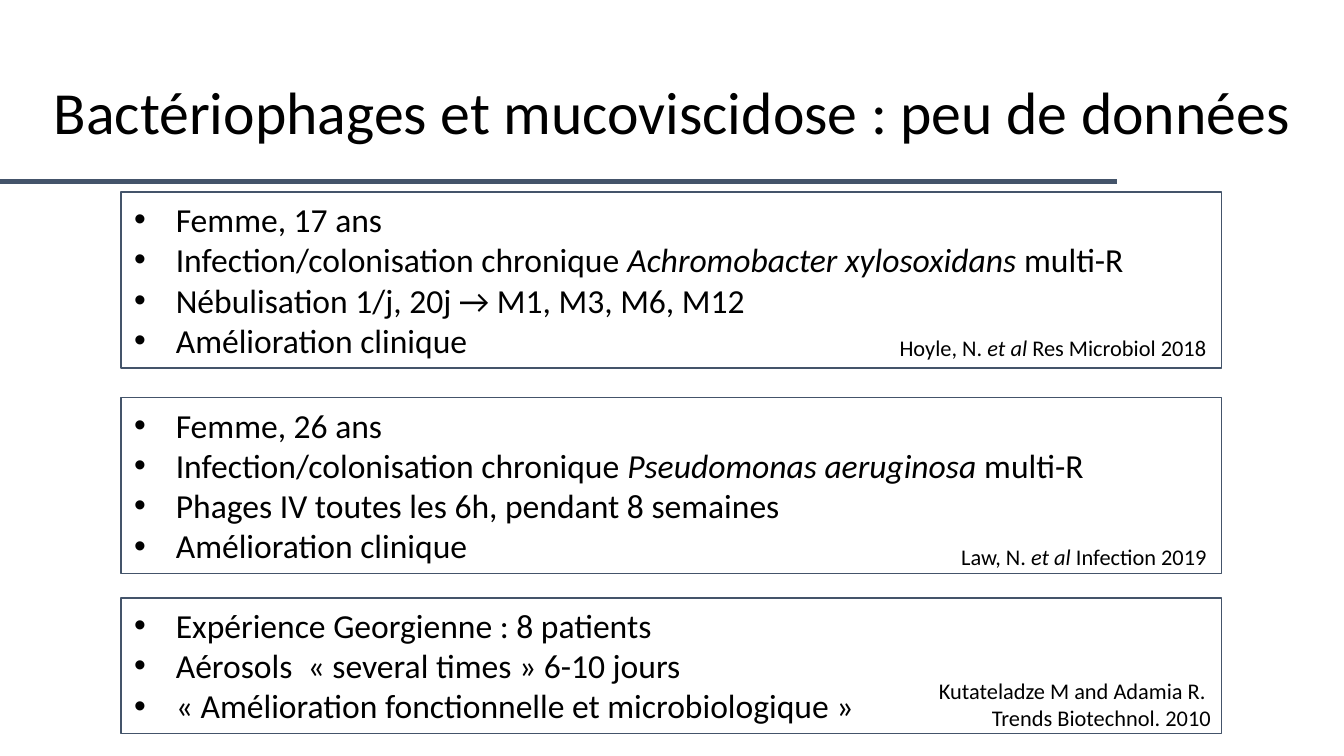
import pptx
import pptx.dml.color
import pptx.enum.shapes
import pptx.enum.text
import pptx.oxml
import pptx.oxml.ns
import pptx.util
from pptx.util import Inches

FONT = "Calibri"
BLACK = "000000"
SLATE = "44546A"
ALIGN = pptx.enum.text.PP_ALIGN
BOX_LEFT, BOX_WIDTH = 0.9, 8.19

# Text between asterisks is italic. Citation boxes are left, top, width, height.
CASES = [
    {
        "top": 1.43, "height": 1.31,
        "points": [
            "Femme, 17 ans",
            "Infection/colonisation chronique *Achromobacter xylosoxidans *multi-R",
            "Nébulisation 1/j, 20j → M1, M3, M6, M12",
            "Amélioration clinique",
        ],
        "citation": ["Hoyle, N. *et al *Res Microbiol 2018"],
        "citation_box": (6.58, 2.44, 2.51, 0.3),
        "alignment": ALIGN.CENTER,
    },
    {
        "top": 2.96, "height": 1.31,
        "points": [
            "Femme, 26 ans",
            "Infection/colonisation chronique *Pseudomonas aeruginosa *multi-R",
            "Phages IV toutes les 6h, pendant 8 semaines",
            "Amélioration clinique",
        ],
        "citation": ["Law, N. *et al *Infection 2019"],
        "citation_box": (7.04, 3.99, 2.05, 0.3),
        "alignment": ALIGN.CENTER,
    },
    {
        "top": 4.45, "height": 1.01,
        "points": [
            "Expérience Georgienne : 8 patients",
            "Aérosols  « several times » 6-10 jours",
            "« Amélioration fonctionnelle et microbiologique »",
        ],
        "citation": ["Kutateladze M and Adamia R. ", "Trends Biotechnol. 2010"],
        "citation_box": (6.86, 4.99, 2.25, 0.5),
        "alignment": ALIGN.RIGHT,
    },
]


def color(hex_string):
    return pptx.dml.color.RGBColor.from_string(hex_string)


def set_values(target, values):
    for name, value in values.items():
        setattr(target, name, value)


def add_bullet(paragraph):
    properties = paragraph._p.get_or_add_pPr()
    properties.set("marL", str(Inches(0.31)))
    properties.set("indent", str(-Inches(0.31)))
    for tag, name, value in (("a:buFont", "typeface", "Arial"), ("a:buChar", "char", "•")):
        bullet_part = pptx.oxml.parse_xml(f'<{tag} {pptx.oxml.ns.nsdecls("a")} {name}="{value}"/>')
        properties.append(bullet_part)


def write_text(shape, lines, size, alignment=ALIGN.LEFT, wrap=False, bullets=False, line_spacing=1.0):
    frame = shape.text_frame
    set_values(frame, {
        "word_wrap": wrap,
        "auto_size": pptx.enum.text.MSO_AUTO_SIZE.NONE,
        "vertical_anchor": pptx.enum.text.MSO_ANCHOR.TOP,
    })
    for index, line in enumerate(lines):
        paragraph = frame.add_paragraph() if index else frame.paragraphs[0]
        set_values(paragraph, {"alignment": alignment, "line_spacing": line_spacing})
        if bullets:
            add_bullet(paragraph)
        for part, text in enumerate(line.split("*")):
            run = paragraph.add_run()
            run.text = text
            set_values(run.font, {"name": FONT, "size": pptx.util.Pt(size), "italic": part % 2 == 1})
            run.font.color.rgb = color(BLACK)


def add_heading(slide, left, top, width, height):
    title = slide.shapes.title
    set_values(title, {
        "left": Inches(left), "top": Inches(top),
        "width": Inches(width), "height": Inches(height),
    })
    write_text(title, ["Bactériophages et mucoviscidose : peu de données"], 32, line_spacing=1.5)
    rule_top = Inches(top + 1.11)
    rule = slide.shapes.add_connector(
        pptx.enum.shapes.MSO_CONNECTOR.STRAIGHT, 0, rule_top, Inches(8.31), rule_top)
    rule.line.color.rgb = color(SLATE)
    rule.line.width = pptx.util.Pt(2.75)
    rule._element.spPr.append(pptx.oxml.parse_xml(f'<a:effectLst {pptx.oxml.ns.nsdecls("a")}/>'))


def add_case(slide, case):
    """Add a framed list of findings with its citation."""
    box = (BOX_LEFT, case["top"], BOX_WIDTH, case["height"])
    frame = slide.shapes.add_shape(
        pptx.enum.shapes.MSO_SHAPE.RECTANGLE, *map(Inches, box))
    frame.shadow.inherit = False
    frame.fill.background()
    frame.line.color.rgb = color(SLATE)
    frame.line.width = pptx.util.Pt(0.75)
    write_text(frame, case["points"], 18, wrap=True, bullets=True)
    citation = slide.shapes.add_textbox(*map(Inches, case["citation_box"]))
    write_text(citation, case["citation"], 12, alignment=case["alignment"])


def main():
    presentation = pptx.Presentation()
    # Widescreen, 16:9
    set_values(presentation, {"slide_width": Inches(10), "slide_height": Inches(10 * 9 / 16)})
    slide = presentation.slides.add_slide(presentation.slide_layouts.get_by_name("Title Only"))
    add_heading(slide, 0.3, 0.24, 9.5, 0.91)
    for case in CASES:
        add_case(slide, case)
    presentation.save("out.pptx")


if __name__ == "__main__":
    main()
